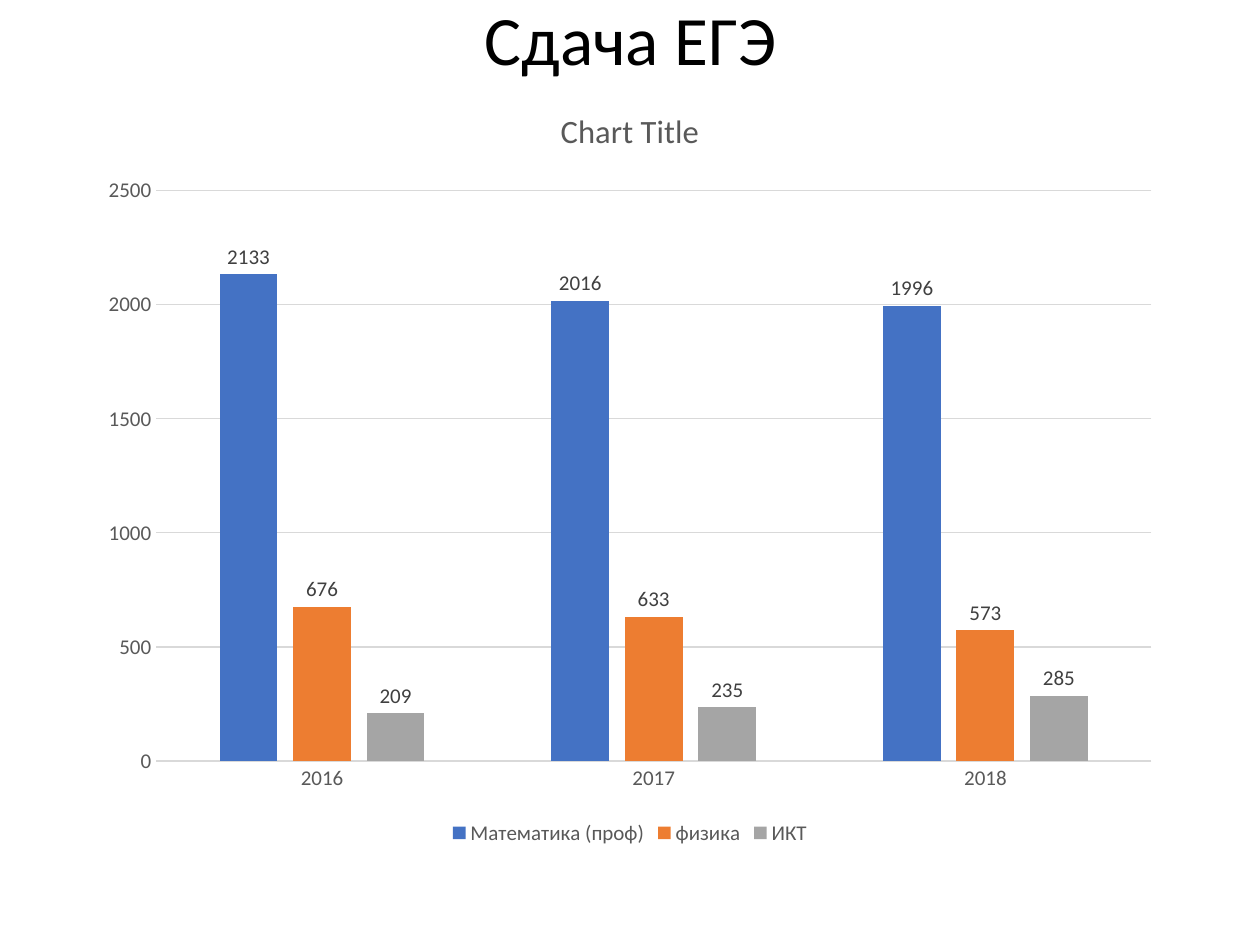
from pptx import Presentation
from pptx.chart.data import CategoryChartData as ChartData
from pptx.dml.color import RGBColor as RGB
from pptx.enum.chart import XL_CHART_TYPE as CHART, XL_LABEL_POSITION as LABEL
from pptx.enum.chart import XL_LEGEND_POSITION as LEGEND, XL_TICK_MARK as TICK
from pptx.enum.text import MSO_ANCHOR as ANCHOR, PP_ALIGN as ALIGN
from pptx.util import Pt

COLORS = {"black": "000000", "text": "595959", "label": "404040", "grid": "D9D9D9",
          "math": "4472C4", "physics": "ED7D31", "ict": "A5A5A5"}


def style(font, size, color):
    font.name = "Calibri"
    font.size = Pt(size)
    font.bold = False
    font.color.rgb = RGB.from_string(COLORS[color])


def rule(line):
    line.color.rgb = RGB.from_string(COLORS["grid"])
    line.width = Pt(0.75)


deck = Presentation()
deck.slide_width, deck.slide_height = Pt(720), Pt(540)
slide = deck.slides.add_slide(deck.slide_layouts[6])

# Slide title
box = slide.shapes.add_textbox(Pt(50), Pt(3.5), Pt(620.5), Pt(42.5))
frame = box.text_frame
frame.word_wrap = True
frame.vertical_anchor = ANCHOR.MIDDLE
frame.text = "Сдача ЕГЭ"
head = frame.paragraphs[0]
head.alignment = ALIGN.CENTER
head.line_spacing = 0.9
style(head.runs[0].font, 39.6, "black")

# Exam data
exams = [("Математика (проф)", (2133, 2016, 1996), "math"),
         ("физика", (676, 633, 573), "physics"),
         ("ИКТ", (209, 235, 285), "ict")]
data = ChartData()
data.categories = ["2016", "2017", "2018"]
for name, values, _ in exams:
    data.add_series(name, values)

# Column chart
chart = slide.shapes.add_chart(CHART.COLUMN_CLUSTERED, Pt(49.7), Pt(46),
                               Pt(620.6), Pt(440), data).chart
style(chart.font, 10, "black")
chart.has_title = True
chart.chart_title.include_in_layout = False
title = chart.chart_title.text_frame
title.text = "Chart Title"
style(title.paragraphs[0].runs[0].font, 18.6, "text")

# Columns and their labels
plot = chart.plots[0]
plot.gap_width = 219
plot.overlap = -27
plot.vary_by_categories = False
for series, (_, _, color) in zip(plot.series, exams):
    series.format.fill.solid()
    series.format.fill.fore_color.rgb = RGB.from_string(COLORS[color])
    series.invert_if_negative = False
    labels = series.data_labels
    labels.show_value = True
    labels.position = LABEL.OUTSIDE_END
    style(labels.font, 12, "label")

# Axes
years, scale = chart.category_axis, chart.value_axis
for axis in (years, scale):
    axis.major_tick_mark = axis.minor_tick_mark = TICK.NONE
    style(axis.tick_labels.font, 12, "text")
rule(years.format.line)
scale.format.line.fill.background()
scale.minimum_scale, scale.maximum_scale, scale.major_unit = 0, 2500, 500
rule(scale.major_gridlines.format.line)

# Legend
chart.has_legend = True
legend = chart.legend
legend.position = LEGEND.BOTTOM
legend.include_in_layout = False
style(legend.font, 12, "text")

deck.save("out.pptx")
